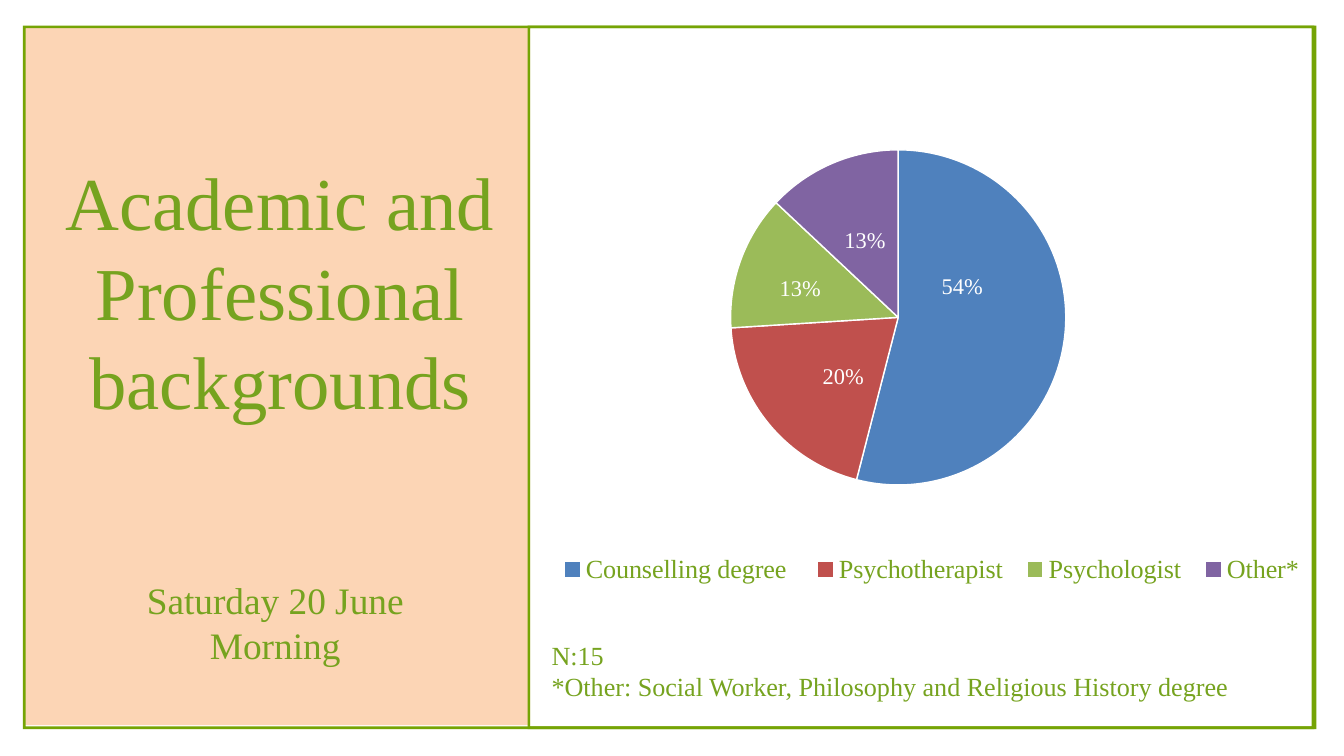
from dataclasses import dataclass

from lxml import etree
from pptx import Presentation
from pptx import util as u
from pptx.chart.data import CategoryChartData
from pptx.dml.color import RGBColor
from pptx.enum import chart as charts, shapes, text
from pptx.oxml import ns

GREEN = "76A31F"
FRAME_GREEN = "75A405"
PEACH = "FCD5B5"
WHITE = "FFFFFF"
SERIF = "Times New Roman"
FRAME_WIDTH = 0.04


@dataclass(frozen=True)
class Area:
    left: float
    top: float
    width: float
    height: float

    def lengths(self) -> tuple:
        return tuple(u.Inches(n) for n in (self.left, self.top, self.width, self.height))

    def corners(self, margin: float = 0) -> list:
        left, top = self.left + margin, self.top + margin
        right = self.left + self.width - margin
        bottom = self.top + self.height - margin
        return [(u.Inches(x), u.Inches(y)) for x, y in
                ((right, top), (left, top), (left, bottom), (right, bottom))]


@dataclass(frozen=True)
class Slice:
    name: str
    percent: int
    color: str
    label_x: float
    label_y: float


FRAMES = [Area(0.34, 0.38, 19.25, 10.47), Area(7.85, 0.38, 11.71, 10.47)]
SLICES = [
    Slice("Counselling degree ", 54, "4F81BD", -0.02, -0.07),
    Slice("Psychotherapist", 20, "C0504D", 0.01, 0.01),
    Slice("Psychologist", 13, "9BBB59", -0.02, 0),
    Slice("Other*", 13, "8064A2", 0, 0),
]


def rgb(value: str) -> RGBColor:
    return RGBColor.from_string(value)


def set_font(font, size: float, color: str) -> None:
    font.name = SERIF
    font.size = u.Pt(size)
    font.color.rgb = rgb(color)


def paint(shape, color: str) -> None:
    shape.fill.solid()
    shape.fill.fore_color.rgb = rgb(color)
    shape.line.fill.background()
    shape.shadow.inherit = False


def add_frame(page, area: Area) -> None:
    outer, inner = area.corners(), area.corners(FRAME_WIDTH)
    builder = page.shapes.build_freeform(*outer[0], scale=1.0)
    builder.add_line_segments(outer[1:], close=True)
    builder.move_to(*inner[0])
    builder.add_line_segments(inner[1:], close=True)
    paint(builder.convert_to_shape(), FRAME_GREEN)


def add_text(page, area: Area, content: str, *, size: float,
             align=text.PP_ALIGN.LEFT, inset: bool = True) -> None:
    box = page.shapes.add_textbox(*area.lengths())
    frame = box.text_frame
    frame.word_wrap = True
    frame.auto_size = text.MSO_AUTO_SIZE.SHAPE_TO_FIT_TEXT
    if not inset:
        frame.margin_left = frame.margin_right = 0
        frame.margin_top = frame.margin_bottom = 0
    frame.text = content
    for para in frame.paragraphs:
        para.alignment = align
        para.line_spacing = u.Pt(size * 1.2)
        for span in para.runs:
            set_font(span.font, size, GREEN)


def manual_layout(**values):
    layout = etree.Element(ns.qn("c:layout"))
    manual = etree.SubElement(layout, ns.qn("c:manualLayout"))
    for name, value in values.items():
        etree.SubElement(manual, ns.qn(f"c:{name}")).set("val", str(value))
    return layout


def place(parent, before: str, layout) -> None:
    for old in parent.findall(ns.qn("c:layout")):
        parent.remove(old)
    parent.find(ns.qn(before)).addprevious(layout)


def add_pie(page, area: Area) -> None:
    data = CategoryChartData()
    data.categories = [wedge.name for wedge in SLICES]
    data.add_series("Series 1", [wedge.percent for wedge in SLICES])
    chart = page.shapes.add_chart(
        charts.XL_CHART_TYPE.PIE, *area.lengths(), data).chart
    chart.has_title = False
    chart.font.name = "Calibri"
    chart.font.size = u.Pt(10)
    chart.has_legend = True
    legend = chart.legend
    legend.position = charts.XL_LEGEND_POSITION.BOTTOM
    legend.include_in_layout = False
    set_font(legend.font, 28, GREEN)

    plot = chart.plots[0]
    plot.vary_by_categories = True
    series = plot.series[0]
    labels = series.data_labels
    labels.show_value = False
    labels.show_percentage = True
    labels.position = charts.XL_LABEL_POSITION.CENTER
    set_font(labels.font, 24, WHITE)
    for index, wedge in enumerate(SLICES):
        point = series.points[index]
        point.format.fill.solid()
        point.format.fill.fore_color.rgb = rgb(wedge.color)
        point.format.line.color.rgb = rgb(WHITE)
        point.format.line.width = u.Pt(1.5)
        set_font(point.data_label.font, 24, WHITE)
        point.data_label.position = charts.XL_LABEL_POSITION.CENTER

    root = chart.element
    for wedge, label in zip(SLICES, root.iter(ns.qn("c:dLbl"))):
        label.find(ns.qn("c:showVal")).set("val", "0")
        label.find(ns.qn("c:showPercent")).set("val", "1")
        place(label, "c:txPr", manual_layout(x=wedge.label_x, y=wedge.label_y))
    place(next(root.iter(ns.qn("c:plotArea"))), "c:pieChart", manual_layout(
        layoutTarget="inner", xMode="edge", yMode="edge",
        x=0.33, y=0.16, w=0.35, h=0.75))
    place(next(root.iter(ns.qn("c:legend"))), "c:overlay", manual_layout(
        xMode="edge", yMode="edge", x=0.14, y=0.92, w=0.8, h=0.08))


def main() -> None:
    deck = Presentation()
    deck.slide_width, deck.slide_height = u.Inches(20), u.Inches(11.25)
    page = deck.slides.add_slide(deck.slide_layouts[6])
    panel = page.shapes.add_shape(
        shapes.MSO_SHAPE.RECTANGLE, *Area(0.35, 0.4, 7.54, 10.39).lengths())
    paint(panel, PEACH)
    for area in FRAMES:
        add_frame(page, area)
    add_text(page, Area(0.84, 2.32, 6.66, 4.04),
             "Academic and Professional backgrounds",
             size=80, align=text.PP_ALIGN.CENTER, inset=False)
    add_pie(page, Area(6.17, 0, 14.25, 8.83))
    add_text(page, Area(8.11, 9.46, 11.62, 1.45),
             "N:15\n*Other: Social Worker, Philosophy and Religious History degree",
             size=28)
    add_text(page, Area(1.8, 8.54, 4.59, 1.45), "Saturday 20 June Morning",
             size=40, align=text.PP_ALIGN.CENTER)
    deck.save("out.pptx")


if __name__ == "__main__":
    main()
